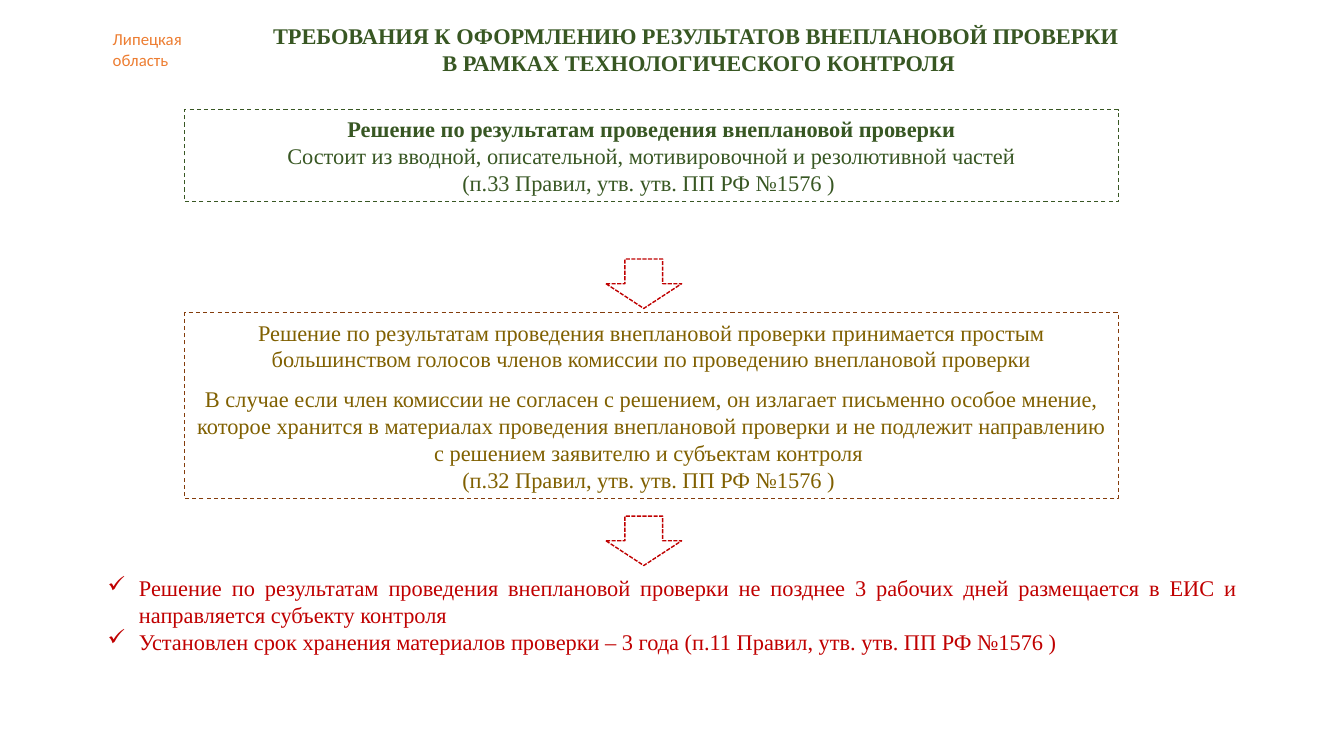
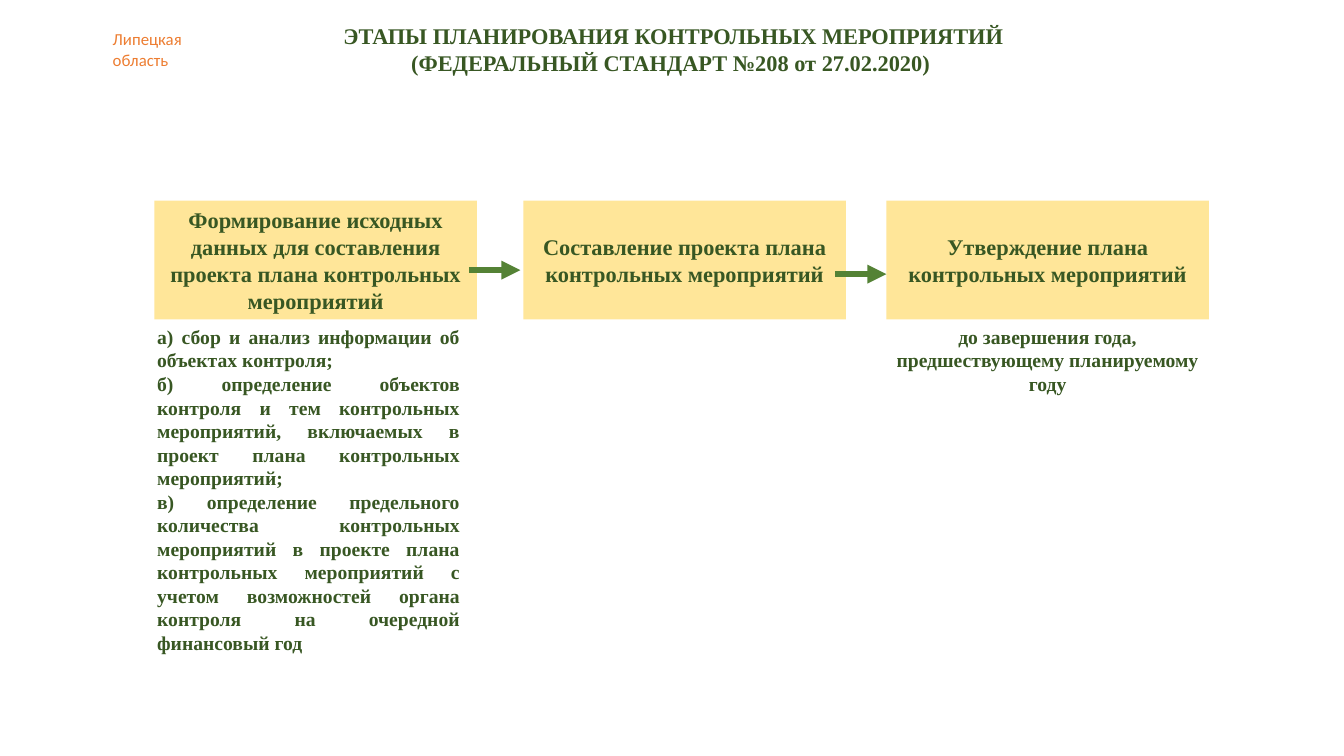
import dataclasses

import lxml.etree
import pptx
import pptx.dml.color
import pptx.enum.dml
import pptx.enum.shapes
import pptx.enum.text
import pptx.oxml.ns
import pptx.util

ALIGN = pptx.enum.text.PP_ALIGN
ANCHOR = pptx.enum.text.MSO_ANCHOR
DASH = pptx.enum.dml.MSO_LINE
SHAPE = pptx.enum.shapes.MSO_SHAPE


@dataclasses.dataclass(frozen=True)
class Theme:
    serif: str = "Times New Roman"
    sans: str = "Calibri"
    green: str = "385723"
    arrow_green: str = "548235"
    gold: str = "806000"
    brown: str = "843C0B"
    red: str = "C00000"
    orange: str = "ED7D31"
    yellow: str = "FFE699"
    white: str = "FFFFFF"
    body: float = 16
    detail: float = 14
    label: float = 12
    gap: float = 9.3


@dataclasses.dataclass(frozen=True)
class Box:
    x: float
    y: float
    w: float
    h: float

    def percent(self, x, y, w, h):
        return Box(self.x + self.w * x / 100, self.y + self.h * y / 100,
                   self.w * w / 100, self.h * h / 100)

    def emu(self):
        return [pptx.util.Inches(v) for v in (self.x, self.y, self.w, self.h)]


T = Theme()
PAGE = Box(0, 0, 13.33, 7.5)


def rgb(value):
    return pptx.dml.color.RGBColor.from_string(value)


def add_xml(parent, tag, **attributes):
    return lxml.etree.SubElement(parent, pptx.oxml.ns.qn(tag), **attributes)


def write(tf, lines, color=T.green, size=T.body, align=ALIGN.CENTER,
          bold_lines=0, font=T.serif, anchor=ANCHOR.TOP):
    tf.word_wrap = True
    tf.auto_size = pptx.enum.text.MSO_AUTO_SIZE.NONE
    tf.vertical_anchor = anchor
    tf.text = "\n".join(lines)
    for i, p in enumerate(tf.paragraphs):
        p.alignment = align
        p.line_spacing = 1.0
        for r in p.runs:
            r.font.name = font
            r.font.size = pptx.util.Pt(size)
            r.font.bold = i < bold_lines
            r.font.color.rgb = rgb(color)


def add_text(s, box, lines, **style):
    tf = s.shapes.add_textbox(*box.emu()).text_frame
    write(tf, lines, **style)
    return tf


def add_shape(s, kind, box, fill=None, line=None, width=0.75, dash=DASH.DASH):
    sp = s.shapes.add_shape(kind, *box.emu())
    sp.shadow.inherit = False
    if fill:
        sp.fill.solid()
        sp.fill.fore_color.rgb = rgb(fill)
    else:
        sp.fill.background()
    if line:
        sp.line.color.rgb = rgb(line)
        sp.line.width = pptx.util.Pt(width)
        sp.line.dash_style = dash
    else:
        sp.line.fill.background()
    return sp


def add_region_label(s):
    sp = s.shapes.add_textbox(*PAGE.percent(7.65, 3.2, 6.83, 6.67).emu())
    write(sp.text_frame, ["Липецкая", "область"], color=T.orange,
          size=T.label, align=ALIGN.LEFT, font=T.sans)
    s.slide_layout.shapes.element.append(sp.element)


def add_titled_slide(prs, lines, left):
    s = prs.slides.add_slide(prs.slide_layouts[5])
    title = s.shapes.title
    title.left, title.top, title.width, title.height = PAGE.percent(
        left, 2.27, 85.52, 8.53).emu()
    write(title.text_frame, lines, bold_lines=len(lines))
    return s


def add_frame(s, box, lines, line, color, bold_lines=0):
    sp = add_shape(s, SHAPE.RECTANGLE, box, line=line)
    write(sp.text_frame, lines, color=color, bold_lines=bold_lines,
          anchor=ANCHOR.MIDDLE)
    return sp.text_frame


def add_decision_flow(s, box):
    add_frame(s, box.percent(0, 0, 100, 20.13), [
        "Решение по результатам проведения внеплановой проверки",
        "Состоит из вводной, описательной, мотивировочной и резолютивной частей",
        "(п.33 Правил, утв. утв. ПП РФ №1576 ) ",
    ], T.green, T.green, bold_lines=1)
    tf = add_frame(s, box.percent(0, 44.47, 100, 40.93), [
        "Решение по результатам проведения внеплановой проверки принимается "
        "простым большинством голосов членов комиссии по проведению "
        "внеплановой проверки",
        "В случае если член комиссии не согласен с решением, он излагает "
        "письменно особое мнение, которое хранится в материалах проведения "
        "внеплановой проверки и не подлежит направлению с решением заявителю "
        "и субъектам контроля ",
        "(п.32 Правил, утв. утв. ПП РФ №1576 ) ",
    ], T.brown, T.gold)
    tf.paragraphs[1].space_before = pptx.util.Pt(T.gap)
    for top in (32.74, 89.16):
        add_shape(s, SHAPE.DOWN_ARROW, box.percent(45.14, top, 8.1, 10.84),
                  fill=T.white, line=T.red, width=1, dash=DASH.SQUARE_DOT)


def add_conclusions(s, box):
    tf = add_text(s, box, [
        "Решение по результатам проведения внеплановой проверки не позднее "
        "3 рабочих дней размещается в ЕИС и направляется субъекту контроля ",
        "Установлен срок хранения материалов проверки – 3 года "
        "(п.11 Правил, утв. утв. ПП РФ №1576 ) ",
    ], color=T.red, align=ALIGN.JUSTIFY)
    indent = pptx.util.Inches(0.31)
    for p in tf.paragraphs:
        pPr = p._p.get_or_add_pPr()
        pPr.set("marL", str(indent))
        pPr.set("indent", str(-indent))
        add_xml(pPr, "a:buChar", char="✓")


def add_stage(s, box, heading):
    sp = add_shape(s, SHAPE.RECTANGLE, box, fill=T.yellow)
    write(sp.text_frame, [heading], bold_lines=1, anchor=ANCHOR.MIDDLE)


def add_stage_arrow(s, box):
    x, y, w, h = box.emu()
    cx = s.shapes.add_connector(
        pptx.enum.shapes.MSO_CONNECTOR.STRAIGHT, x, y, x + w, y + h)
    cx.line.color.rgb = rgb(T.arrow_green)
    cx.line.width = pptx.util.Pt(4.5)
    spPr = cx.element.spPr
    add_xml(spPr.find(pptx.oxml.ns.qn("a:ln")), "a:tailEnd", type="triangle")
    add_xml(spPr, "a:effectLst")


def add_planning_stages(s, box):
    width = 30.59
    stages = [
        (0, "Формирование исходных данных для составления проекта плана "
            "контрольных мероприятий"),
        (34.99, "Составление проекта плана контрольных мероприятий"),
        (69.41, "Утверждение плана контрольных мероприятий"),
    ]
    details = [
        (-0.67, 74.07, ALIGN.JUSTIFY, [
            "а) сбор и анализ информации об объектах контроля;",
            "б) определение объектов контроля и тем контрольных мероприятий, "
            "включаемых в проект плана контрольных мероприятий; ",
            "в) определение предельного количества контрольных мероприятий в "
            "проекте плана контрольных мероприятий с учетом возможностей "
            "органа контроля на очередной финансовый год ",
        ]),
        (69.41, 17.65, ALIGN.CENTER, [
            "до завершения года, предшествующему планируемому году",
        ]),
    ]
    for left, heading in stages:
        add_stage(s, box.percent(left, 0, width, 25.71), heading)
    for left, height, align, lines in details:
        add_text(s, box.percent(left, 25.8, width, height), lines,
                 size=T.detail, align=align, bold_lines=len(lines))
    for left, top in ((29.83, 15.03), (64.53, 15.9)):
        add_stage_arrow(s, box.percent(left, top, 4.88, 0))


def main():
    prs = pptx.Presentation()
    prs.slide_width = pptx.util.Inches(PAGE.w)
    prs.slide_height = pptx.util.Inches(PAGE.h)

    s = add_titled_slide(prs, [
        "ТРЕБОВАНИЯ К ОФОРМЛЕНИЮ РЕЗУЛЬТАТОВ ВНЕПЛАНОВОЙ ПРОВЕРКИ ",
        "В РАМКАХ ТЕХНОЛОГИЧЕСКОГО КОНТРОЛЯ",
    ], left=9.23)
    add_region_label(s)
    add_decision_flow(s, PAGE.percent(13.73, 14.53, 69.47, 60.27))
    add_conclusions(s, PAGE.percent(7.28, 75.33, 85.52, 15.73))

    s = add_titled_slide(prs, [
        "ЭТАПЫ ПЛАНИРОВАНИЯ КОНТРОЛЬНЫХ МЕРОПРИЯТИЙ",
        "(ФЕДЕРАЛЬНЫЙ СТАНДАРТ №208 от 27.02.2020) ",
    ], left=7.35)
    add_planning_stages(s, PAGE.percent(11.48, 26.53, 78.47, 61.2))

    prs.save("out.pptx")


if __name__ == "__main__":
    main()
